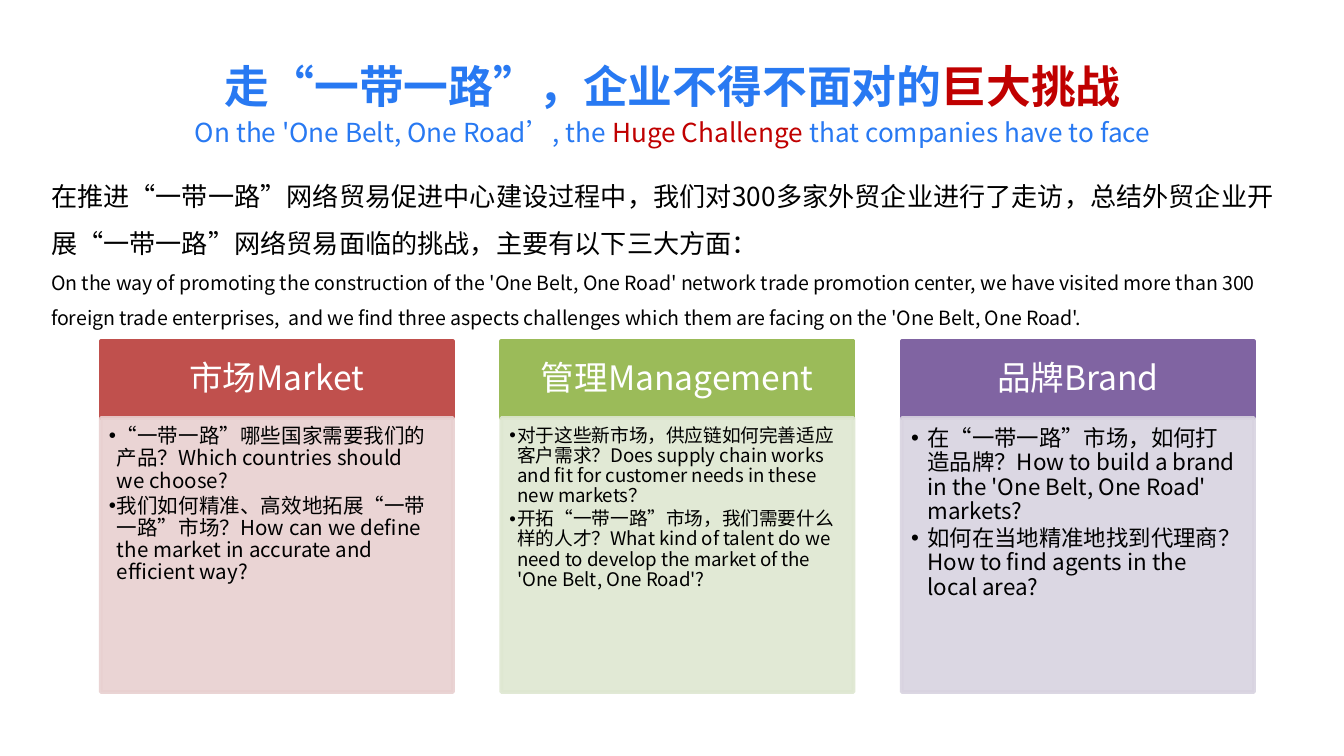
import pptx
import pptx.util
import pptx.dml.color
import pptx.enum.shapes
import pptx.enum.text
import pptx.oxml.ns
import lxml.etree

Inches, Pt = pptx.util.Inches, pptx.util.Pt
Align, Anchor = pptx.enum.text.PP_ALIGN, pptx.enum.text.MSO_ANCHOR
qn = pptx.oxml.ns.qn
FONT = "Noto Sans CJK SC"


def rgb(code):
    return pptx.dml.color.RGBColor.from_string(code)


def add_run(par, text, size, color, bold=False):
    run = par.add_run()
    run.text = text
    font = run.font
    font.size, font.bold, font.name = Pt(size), bold, FONT
    font.color.rgb = rgb(color)
    lxml.etree.SubElement(font._element, qn("a:ea"), typeface=FONT)


# Widescreen, 16 to 9
deck = pptx.Presentation()
deck.slide_width, deck.slide_height = Inches(10), Inches(10 * 9 / 16)
slide = deck.slides.add_slide(deck.slide_layouts[4])
title, intro, *lists = slide.placeholders

# Title and subtitle
sub = slide.shapes.add_textbox(0, 0, 0, 0)
heads = [
    (title, 0.31, 24, True, [("走“一带一路”，企业不得不面对的", "2879F2"),
                             ("巨大挑战", "C00000")]),
    (sub, 0.66, 14, False, [("On the 'One Belt, One Road’, the ", "2879F2"),
                            ("Huge Challenge ", "C00000"),
                            ("that companies have to face", "2879F2")]),
]
for box, top, size, bold, parts in heads:
    box.left, box.top = Inches(0.75), Inches(top)
    box.width, box.height = Inches(8.51), Inches(0.65)
    frame = box.text_frame
    frame.word_wrap = True
    frame.auto_size = pptx.enum.text.MSO_AUTO_SIZE.NONE
    frame.vertical_anchor = Anchor.MIDDLE
    par = frame.paragraphs[0]
    par.alignment = Align.CENTER
    for text, color in parts:
        add_run(par, text, size, color, bold)

# Introduction
intro.left, intro.top = Inches(0.28), Inches(1.37)
intro.width, intro.height = Inches(9.45), Inches(0.94)
frame = intro.text_frame
frame.auto_size = pptx.enum.text.MSO_AUTO_SIZE.NONE
frame.vertical_anchor = Anchor.MIDDLE
lines = [
    ("在推进“一带一路”网络贸易促进中心建设过程中，我们对300多家外贸企业进行了走访，总结外贸企业开展“一带一路”网络贸易面临的挑战，主要有以下三大方面：", 14),
    ("On the way of promoting the construction of the 'One Belt, One Road' network trade promotion center, we have visited more than 300 foreign trade enterprises,  and we find three aspects challenges which them are facing on the 'One Belt, One Road'.", 10.5),
]
for i, (text, size) in enumerate(lines):
    par = frame.add_paragraph() if i else frame.paragraphs[0]
    par.line_spacing, par.space_before = 1.5, Pt(0)
    add_run(par, text, size, "000000")

# Three columns: heading, dark and pale colour, text size, indent,
# left and right inset, items
cols = [
    ("市场Market", "C0504D", "E8D0D0", 11, 0.06, 0.06, 0.13,
     ["“一带一路”哪些国家需要我们的产品？Which countries should we choose?",
      "我们如何精准、高效地拓展“一带一路”市场？How can we define the market in accurate and efficient way?"]),
    ("管理Management", "9BBB59", "DEE7D1", 10, 0.06, 0.06, 0.08,
     ["对于这些新市场，供应链如何完善适应客户需求？Does supply chain works and fit for customer needs in these new markets？",
      "开拓“一带一路”市场，我们需要什么样的人才？What kind of talent do we need to develop the market of the 'One Belt, One Road'?"]),
    ("品牌Brand", "8064A2", "D8D3E0", 12, 0.12, 0.07, 0.13,
     ["在“一带一路”市场，如何打造品牌？How to build a brand in the 'One Belt, One Road' markets?",
      "如何在当地精准地找到代理商？How to find agents in the local area?"]),
]
for i, (name, dark, pale, size, indent, inset, right, items) in enumerate(cols):
    left, width = Inches(0.75 + 2.98 * i), Inches(2.62)

    # Heading bar
    head = slide.shapes.add_shape(pptx.enum.shapes.MSO_SHAPE.RECTANGLE,
                                  left, Inches(2.54), width, Inches(0.57))
    head.shadow.inherit = False
    frame = head.text_frame
    frame.word_wrap = True
    frame.vertical_anchor = Anchor.MIDDLE
    par = frame.paragraphs[0]
    par.alignment, par.line_spacing = Align.CENTER, 0.9
    add_run(par, name, 18, "FFFFFF")

    # List panel, in front of the heading bar
    panel = lists[i]
    head._element.addnext(panel._element)
    panel.left, panel.top = left, Inches(3.11)
    panel.width, panel.height = width, Inches(2.04)
    frame = panel.text_frame
    frame.auto_size = pptx.enum.text.MSO_AUTO_SIZE.NONE
    frame.vertical_anchor = Anchor.TOP
    frame.margin_left = frame.margin_top = Inches(inset)
    frame.margin_right, frame.margin_bottom = Inches(right), Inches(0.09)
    for j, text in enumerate(items):
        par = frame.add_paragraph() if j else frame.paragraphs[0]
        props = par._p.get_or_add_pPr()
        props.set("marL", str(Inches(indent)))
        props.set("indent", str(-Inches(indent)))
        lxml.etree.SubElement(props, qn("a:buChar"), char="•")
        par.level, par.line_spacing = 1, 0.9
        par.space_before, par.space_after = Pt(0), Pt(0.15 * size)
        add_run(par, text, size, "000000")

    for box, color in ((head, dark), (panel, pale)):
        box.fill.solid()
        box.fill.fore_color.rgb = rgb(color)
        box.line.color.rgb = rgb(color)
        box.line.width = Pt(2)
    # Pale panels are slightly see-through
    for tint in panel._element.spPr.iter(qn("a:srgbClr")):
        lxml.etree.SubElement(tint, qn("a:alpha"), val="90000")

deck.save("out.pptx")
